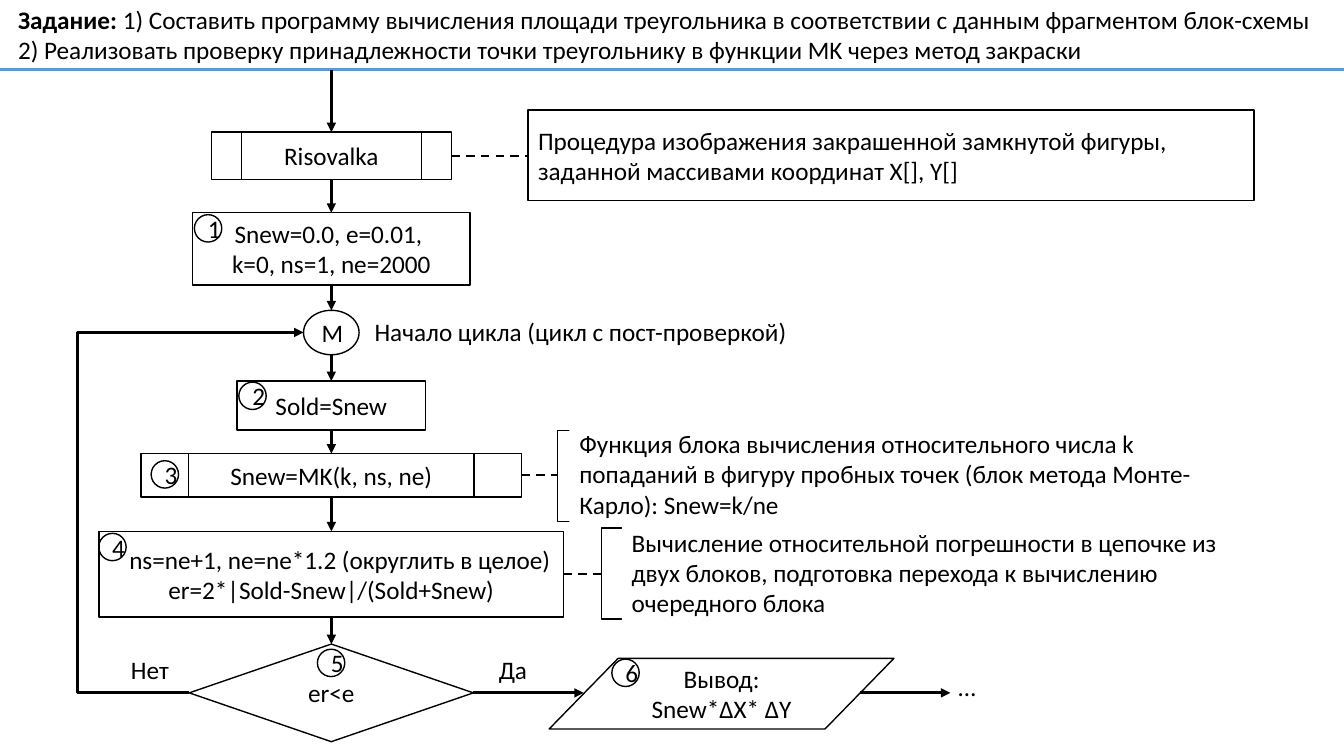
from lxml.etree import SubElement
from pptx import Presentation
from pptx.dml.color import RGBColor
from pptx.enum.dml import MSO_LINE
from pptx.enum.shapes import MSO_CONNECTOR, MSO_SHAPE
from pptx.enum.text import MSO_ANCHOR, MSO_AUTO_SIZE, PP_ALIGN
from pptx.oxml.ns import qn
from pptx.util import Cm, Pt

COLORS = {"ink": "000000", "paper": "FFFFFF", "rule": "5B9BD5"}
FONT, SIZE = "Calibri", 18
SLIDE_WIDTH, SLIDE_HEIGHT = 33.87, 19.05

TASK_LABEL = "Задание:"
TASK_LINES = [
    " 1) Составить программу вычисления площади треугольника в соответствии с данным фрагментом блок-схемы",
    "2) Реализовать проверку принадлежности точки треугольнику в функции MK через метод закраски",
]
RULE_Y = 1.76

# Flow from top to bottom, centred on one axis: name, preset, top, width, height, text
AXIS = 8.35
FLOW = [
    ("draw", MSO_SHAPE.FLOWCHART_PREDEFINED_PROCESS, 3.33, 6.05, 1.19, "Risovalka"),
    ("start", MSO_SHAPE.RECTANGLE, 5.36, 6.99, 1.82, "Snew=0.0, e=0.01, \nk=0, ns=1, ne=2000"),
    ("loop", MSO_SHAPE.OVAL, 7.82, 1.4, 1.12, "M"),
    ("keep", MSO_SHAPE.RECTANGLE, 9.6, 4.75, 1.24, "Sold=Snew"),
    ("count", MSO_SHAPE.FLOWCHART_PREDEFINED_PROCESS, 11.43, 9.6, 1.09, "Snew=MK(k, ns, ne)"),
    ("error", MSO_SHAPE.RECTANGLE, 13.39, 11.71, 2.16,
     "ns=ne+1, ne=ne*1.2 (округлить в целое)\ner=2*|Sold-Snew|/(Sold+Snew)"),
    ("check", MSO_SHAPE.FLOWCHART_DECISION, 16.23, 7.16, 2.46, "er<e"),
]
OUTPUT_BOX, OUTPUT_TEXT = (13.84, 16.59, 8.69, 1.78), "Вывод:\nSnew*ΔX* ΔY"
ERROR_INDENT = 0.43
LOOP_BACK_X = 1.96

# Remarks: flow block, frame, text area (None when the text sits in the frame), text
REMARKS = [
    ("count", (14.05, 10.85, 1.04, 2.29), (14.35, 10.67, 16.76, 2.54),
     "Функция блока вычисления относительного числа k попаданий в фигуру пробных точек "
     "(блок метода Монте-Карло): Snew=k/ne"),
    ("draw", (13.31, 2.77, 18.29, 2.29), None,
     "Процедура изображения закрашенной замкнутой фигуры, заданной массивами координат X[], Y[]"),
    ("error", (15.16, 13.31, 1.04, 2.29), (15.67, 13.16, 15.8, 2.54),
     "Вычисление относительной погрешности в цепочке из двух блоков, подготовка перехода "
     "к вычислению очередного блока"),
]
# Labels: left, top, width, text
LABELS = [
    (23.9, 16.79, 1.19, "…"),
    (3.05, 16.36, 1.83, "Нет"),
    (12.32, 16.36, 1.52, "Да"),
    (9.19, 7.85, 13.97, "Начало цикла (цикл с пост-проверкой)"),
]
LABEL_HEIGHT = 1.02
# Block numbers 1 to 6: left, top
BADGES = [(4.9, 5.41), (6.02, 9.63), (3.81, 11.61), (2.49, 13.44), (8.0, 16.36), (15.42, 16.61)]
BADGE_SIZE = 0.69


def color(name):
    return RGBColor.from_string(COLORS[name])


def format_text(text_frame, align):
    text_frame.word_wrap = True
    for paragraph in text_frame.paragraphs:
        paragraph.alignment = align
        for run in paragraph.runs:
            run.font.name, run.font.size = FONT, Pt(SIZE)
            run.font.color.rgb = color("ink")


def add_block(preset, box, text="", align=PP_ALIGN.CENTER, outlined=True):
    shape = slide.shapes.add_shape(preset, *map(Cm, box))
    shape.shadow.inherit = False
    if outlined:
        shape.fill.background()
        shape.line.color.rgb, shape.line.width = color("ink"), Pt(1)
    else:
        shape.fill.solid()
        shape.fill.fore_color.rgb = color("paper")
        shape.line.fill.background()
    if text:
        shape.text_frame.text = text
        shape.text_frame.vertical_anchor = MSO_ANCHOR.MIDDLE
        format_text(shape.text_frame, align)
    return shape


def add_line(begin, end, kind=MSO_CONNECTOR.STRAIGHT, ink="ink", width=2.25, arrow=True):
    connector = slide.shapes.add_connector(kind, *map(Cm, begin + end))
    connector.line.color.rgb, connector.line.width = color(ink), Pt(width)
    properties = connector.element.spPr
    if arrow:
        SubElement(properties.find(qn("a:ln")), qn("a:tailEnd"), type="triangle")
    SubElement(properties, qn("a:effectLst"))
    return connector


presentation = Presentation()
presentation.slide_width, presentation.slide_height = Cm(SLIDE_WIDTH), Cm(SLIDE_HEIGHT)
slide = presentation.slides.add_slide(presentation.slide_layouts[5])

# Task heading
title = slide.shapes.title
title.left, title.top, title.width, title.height = map(Cm, (0.2, -0.03, 33.45, 1.8))
frame = title.text_frame
frame.auto_size, frame.vertical_anchor = MSO_AUTO_SIZE.NONE, MSO_ANCHOR.TOP
frame.text = "\n".join([TASK_LABEL] + TASK_LINES[1:])
frame.paragraphs[0].add_run().text = TASK_LINES[0]
format_text(frame, PP_ALIGN.LEFT)
frame.paragraphs[0].runs[0].font.bold = True
for paragraph in frame.paragraphs:
    paragraph.line_spacing, paragraph.space_before = 1.0, Pt(0)
add_line((0, RULE_Y), (SLIDE_WIDTH, RULE_Y), ink="rule", arrow=False)

# Main flow with an arrow into each block
boxes = {}
previous_bottom = RULE_Y
for name, preset, top, width, height, text in FLOW:
    boxes[name] = (AXIS - width / 2, top, width, height)
    block = add_block(preset, boxes[name], text)
    if name == "error":
        properties = block.text_frame.paragraphs[0]._p.get_or_add_pPr()
        properties.set("marL", str(Cm(ERROR_INDENT)))
    add_line((AXIS, previous_bottom), (AXIS, top))
    previous_bottom = top + height

# Output branch
left, top, width, height = boxes["check"]
check_y = top + height / 2
add_block(MSO_SHAPE.FLOWCHART_DATA, OUTPUT_BOX, OUTPUT_TEXT)
output_left, _, output_width, _ = OUTPUT_BOX
slant = output_width / 10
add_line((left + width, check_y), (output_left + slant, check_y))
add_line((output_left + output_width - slant, check_y), (23.95, check_y))

# Return branch to the loop start
loop_left, loop_top, _, loop_height = boxes["loop"]
loop_back = add_line((left, check_y), (loop_left, loop_top + loop_height / 2), MSO_CONNECTOR.ELBOW)
bend = round((LOOP_BACK_X - left) / (loop_left - left) * 100000)
adjustments = loop_back.element.spPr.find(qn("a:prstGeom")).find(qn("a:avLst"))
SubElement(adjustments, qn("a:gd"), name="adj1", fmla=f"val {bend}")

# Remarks with dashed links
for name, frame_box, text_box, text in REMARKS:
    left, top, width, height = boxes[name]
    middle = top + height / 2
    add_block(MSO_SHAPE.FLOWCHART_PROCESS, frame_box, "" if text_box else text, PP_ALIGN.LEFT)
    if text_box:
        add_block(MSO_SHAPE.RECTANGLE, text_box, text, PP_ALIGN.LEFT, outlined=False)
    link = add_line((left + width, middle), (frame_box[0], middle), width=1.5, arrow=False)
    link.line.dash_style = MSO_LINE.DASH

# Labels and block numbers
for left, top, width, text in LABELS:
    label = slide.shapes.add_textbox(*map(Cm, (left, top, width, LABEL_HEIGHT)))
    label.text_frame.text = text
    format_text(label.text_frame, PP_ALIGN.LEFT)
for number, (left, top) in enumerate(BADGES, start=1):
    add_block(MSO_SHAPE.OVAL, (left, top, BADGE_SIZE, BADGE_SIZE), str(number))

presentation.save("out.pptx")
